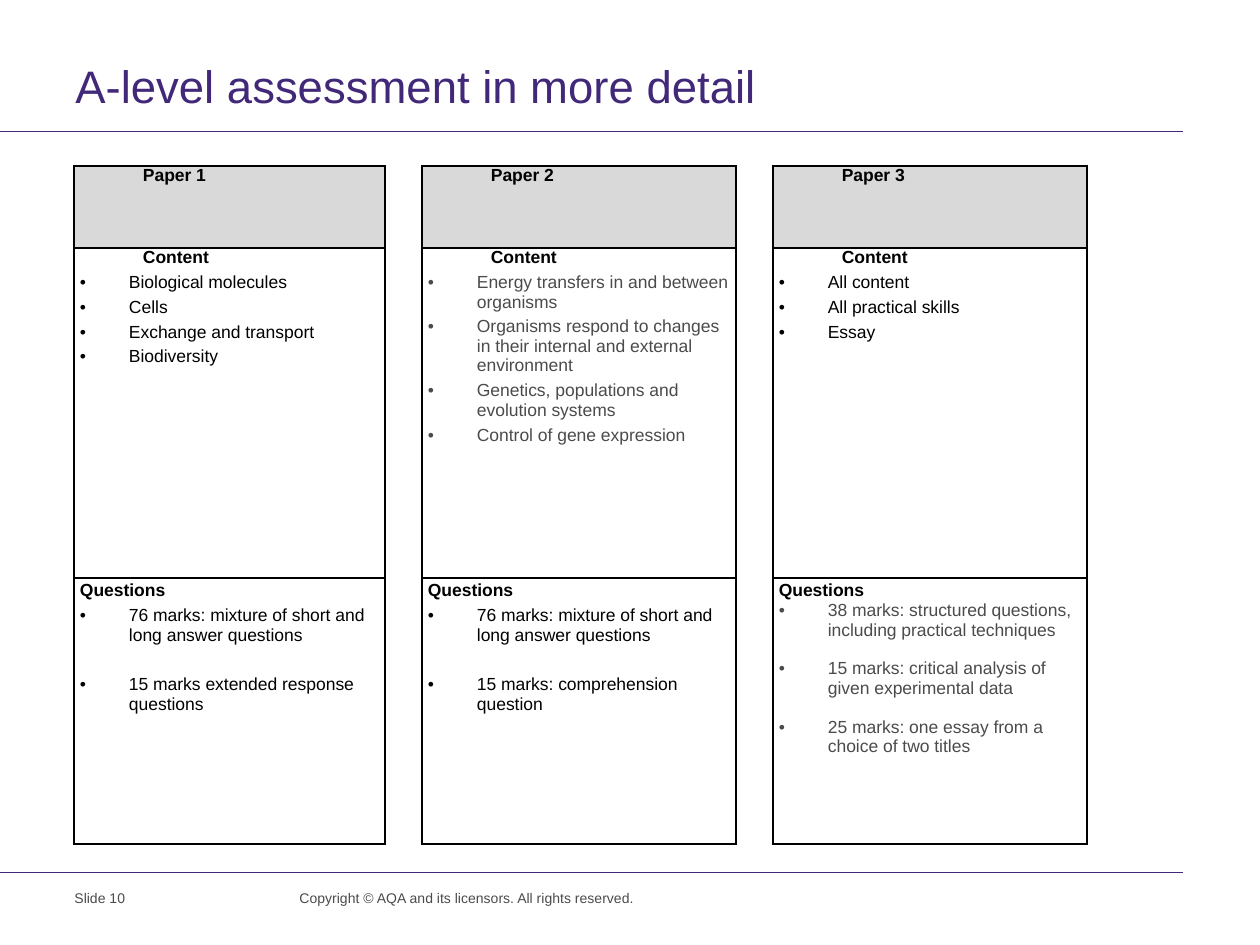
from lxml.etree import SubElement
from pptx import Presentation
from pptx.dml.color import RGBColor
from pptx.enum.shapes import MSO_CONNECTOR
from pptx.enum.text import MSO_ANCHOR
from pptx.oxml.ns import qn
from pptx.util import Emu, Pt

PURPLE = RGBColor(0x41, 0x28, 0x78)
GREY = RGBColor(0x4B, 0x4B, 0x4B)
BLACK = RGBColor(0, 0, 0)
HEADER_FILL = RGBColor(0xD9, 0xD9, 0xD9)
FONT = "Arial"


def px(length):
    """Turn pixels (126 to the inch) into EMU."""
    return Emu(round(length * 914400 / 126))


def add_line(cell_or_text, text, color=BLACK, bold=False, indent=0, bullet=False, before=0):
    """Write one paragraph into a cell's text frame, reusing the empty first one."""
    frame = cell_or_text.text_frame
    paragraph = frame.paragraphs[0] if not frame.text else frame.add_paragraph()
    properties = paragraph._p.get_or_add_pPr()
    properties.set("marL", str(px(indent)))
    properties.set("indent", str(-px(indent) if bullet else 0))
    if bullet:
        SubElement(properties, qn("a:buFont"), typeface=FONT)
        SubElement(properties, qn("a:buChar"), char="•")
    paragraph.text = text
    if before:
        paragraph.space_before = Pt(before)
    paragraph.font.name = FONT
    paragraph.font.size = Pt(10)
    paragraph.font.bold = bold
    paragraph.font.color.rgb = color
    return paragraph


presentation = Presentation()
presentation.slide_width = px(1260)
presentation.slide_height = px(945)
slide = presentation.slides.add_slide(presentation.slide_layouts[6])

# Rules under the title and above the footer
for y in (132, 873):
    rule = slide.shapes.add_connector(MSO_CONNECTOR.STRAIGHT, px(0), px(y), px(1183), px(y))
    rule.line.color.rgb = PURPLE
    rule.line.width = Pt(0.6)
    SubElement(rule._element.spPr, qn("a:effectLst"))

# Title and footer
for text, left, top, width, height, size, color, anchor in (
    ("A-level assessment in more detail", 63, 58, 1197, 60, 26, PURPLE, MSO_ANCHOR.MIDDLE),
    ("Slide 10", 62, 883, 197, 48, 8, GREY, MSO_ANCHOR.TOP),
    ("Copyright © AQA and its licensors. All rights reserved.",
     287, 883, 369, 33, 8, GREY, MSO_ANCHOR.TOP),
):
    box = slide.shapes.add_textbox(px(left), px(top), px(width), px(height))
    frame = box.text_frame
    frame.word_wrap = True
    frame.vertical_anchor = anchor
    paragraph = frame.paragraphs[0]
    paragraph.text = text
    paragraph.font.name = FONT
    paragraph.font.size = Pt(size)
    paragraph.font.color.rgb = color
    if size == 26:
        paragraph.line_spacing = Pt(28)

# Name, content, content colour, questions, question colour,
# space before the first question and before the later ones
PAPERS = [
    ("Paper 1",
     ["Biological molecules", "Cells", "Exchange and transport", "Biodiversity"], BLACK,
     ["76 marks: mixture of short and long answer questions",
      "15 marks extended response questions"], BLACK, 3, 17),
    ("Paper 2",
     ["Energy transfers in and between organisms",
      "Organisms respond to changes in their internal and external environment",
      "Genetics, populations and evolution systems",
      "Control of gene expression"], GREY,
     ["76 marks: mixture of short and long answer questions",
      "15 marks: comprehension question"], BLACK, 3, 17),
    ("Paper 3",
     ["All content", "All practical skills", "Essay"], BLACK,
     ["38 marks: structured questions, including practical techniques",
      "15 marks: critical analysis of given experimental data",
      "25 marks: one essay from a choice of two titles"], GREY, 0, 11),
]
COLUMN_WIDTHS = [311, 37, 314, 37, 314]
ROW_HEIGHTS = [82, 330, 266]

table = slide.shapes.add_table(
    len(ROW_HEIGHTS), len(COLUMN_WIDTHS), px(74), px(166),
    px(sum(COLUMN_WIDTHS)), px(sum(ROW_HEIGHTS))).table
table.first_row = False
table.horz_banding = False
for column, width in zip(table.columns, COLUMN_WIDTHS):
    column.width = px(width)
for row, height in zip(table.rows, ROW_HEIGHTS):
    row.height = px(height)

# Margins, borders and fills; the odd columns are open gaps between the papers
for row_index, row in enumerate(table.rows):
    for column_index, cell in enumerate(row.cells):
        is_gap = column_index % 2 == 1
        cell.margin_left = cell.margin_right = px(6)
        cell.margin_top = cell.margin_bottom = 0
        properties = cell._tc.get_or_add_tcPr()
        for side in ("lnL", "lnR", "lnT", "lnB"):
            border = SubElement(properties, qn(f"a:{side}"), w=str(Pt(1)))
            if is_gap and side in ("lnT", "lnB"):
                SubElement(border, qn("a:noFill"))
            else:
                fill = SubElement(border, qn("a:solidFill"))
                SubElement(fill, qn("a:srgbClr"), val=str(BLACK))
        if row_index == 0 and not is_gap:
            cell.fill.solid()
            cell.fill.fore_color.rgb = HEADER_FILL
        else:
            cell.fill.background()

# Text of the three papers
for index, paper in enumerate(PAPERS):
    name, content, content_color, questions, question_color, first_gap, later_gap = paper
    header_cell, content_cell, question_cell = (table.cell(row, 2 * index) for row in range(3))

    add_line(header_cell, name, bold=True, indent=63)

    add_line(content_cell, "Content", bold=True, indent=63)
    for text in content:
        add_line(content_cell, text, content_color, indent=49, bullet=True, before=3)

    heading = add_line(question_cell, "Questions", bold=True)
    heading.line_spacing = Pt(13)
    for number, text in enumerate(questions):
        add_line(question_cell, text, question_color, indent=49, bullet=True,
                 before=later_gap if number else first_gap)

presentation.save("out.pptx")
